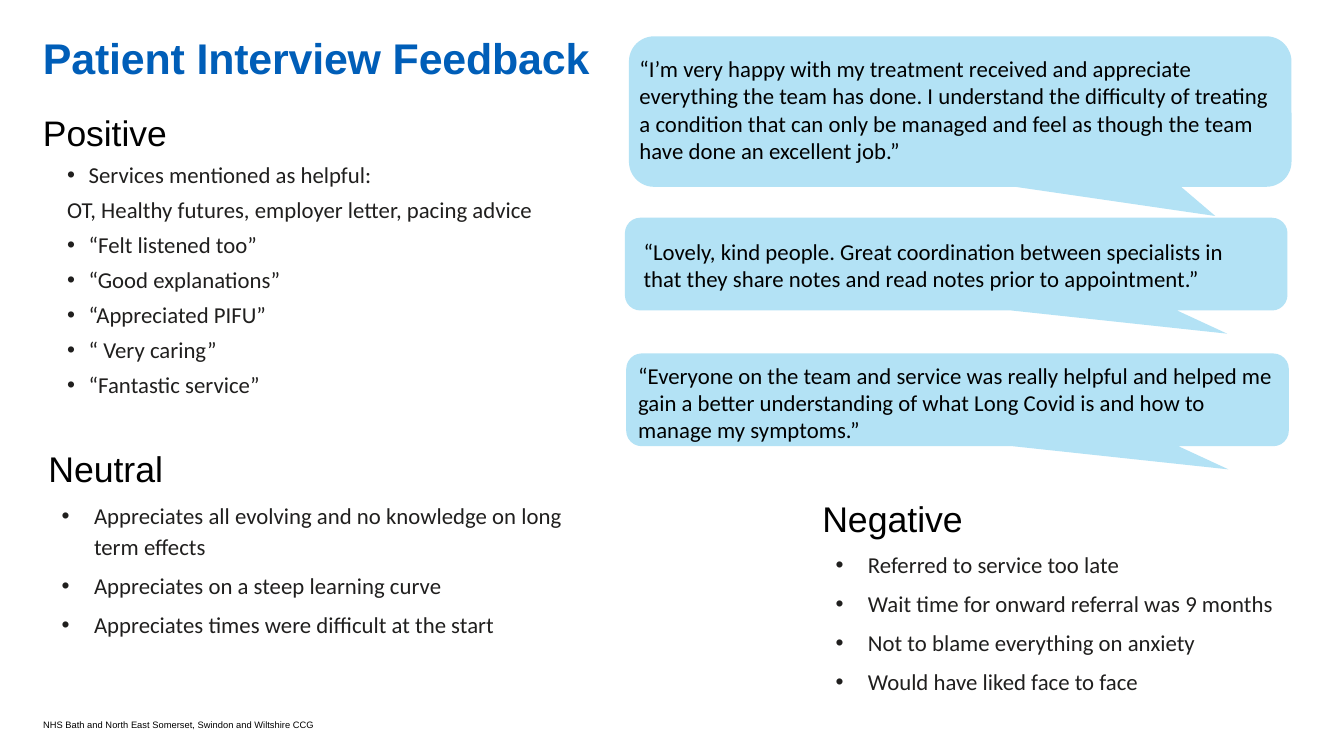
from lxml.etree import SubElement
from pptx import Presentation
from pptx.dml.color import RGBColor
from pptx.enum.shapes import MSO_SHAPE
from pptx.oxml.ns import qn
from pptx.util import Inches, Pt

BLUE = RGBColor(0x00, 0x5E, 0xB8)
PALE_BLUE = RGBColor(0xB3, 0xE2, 0xF5)
BLACK = RGBColor(0, 0, 0)
DARK = RGBColor(0x20, 0x1F, 0x1E)
BODY_SIZE = 12.2

TITLE = "Patient Interview Feedback"
FOOTER = "NHS Bath and North East Somerset, Swindon and Wiltshire CCG"

# Lines in "plain" are indented without a bullet.
SECTIONS = [
    {"heading": "Positive", "box": (0.32, 0.84, 4.36, 3.95), "inset": (0, 0),
     "size": 19, "heading_spacing": Pt(21.8), "line_spacing": 1.0, "hanging": 0.16,
     "plain": ["OT, Healthy futures, employer letter, pacing advice"],
     "lines": ["Services mentioned as helpful:",
               "OT, Healthy futures, employer letter, pacing advice",
               "“Felt listened too”", "“Good explanations”", "“Appreciated PIFU”",
               "“ Very caring”", "“Fantastic service”"]},
    {"heading": "Neutral", "box": (0.36, 3.2, 4.06, 1.89), "inset": (0, 0),
     "size": 19.1, "heading_spacing": Pt(32), "line_spacing": 1.15, "hanging": 0.24,
     "plain": [],
     "lines": ["Appreciates all evolving and no knowledge on long term effects",
               "Appreciates on a steep learning curve",
               "Appreciates times were difficult at the start"]},
    {"heading": "Negative", "box": (6.02, 3.52, 4.77, 1.79), "inset": (0.1, 0.05),
     "size": 19.1, "heading_spacing": Pt(32), "line_spacing": 1.15, "hanging": 0.24,
     "plain": [],
     "lines": ["Referred to service too late",
               "Wait time for onward referral was 9 months",
               "Not to blame everything on anxiety",
               "Would have liked face to face"]},
]

# Callout box, callout adjustments, text box, quote
QUOTES = [
    ((4.68, 0.27, 4.93, 1.12), (0.385, 0.694, 0.167), (4.66, 0.36, 5, 0.93),
     "“I’m very happy with my treatment received and appreciate everything the team "
     "has done. I understand the difficulty of treating a condition that can only be "
     "managed and feel as though the team have done an excellent job.”"),
    ((4.65, 1.62, 4.93, 0.69), (0.409, 0.75, 0.167), (4.69, 1.72, 4.55, 0.81),
     "“Lovely, kind people. Great coordination between specialists in that they share "
     "notes and read notes prior to appointment.”"),
    ((4.66, 2.63, 4.93, 0.69), (0.409, 0.75, 0.167), (4.65, 2.64, 5, 0.63),
     "“Everyone on the team and service was really helpful and helped me gain a better "
     "understanding of what Long Covid is and how to manage my symptoms.”"),
]


def add_text_frame(slide, box, inset=(0, 0)):
    frame = slide.shapes.add_textbox(*map(Inches, box)).text_frame
    frame.word_wrap = True
    frame.margin_left = frame.margin_right = Inches(inset[0])
    frame.margin_top = frame.margin_bottom = Inches(inset[1])
    return frame


def write(paragraph, text, size, color, font_name="Arial", bold=False):
    paragraph.text = text
    font = paragraph.font
    font.name, font.size, font.bold = font_name, Pt(size), bold
    font.color.rgb = color


def set_indent(paragraph, left, hanging=0, bullet=None):
    properties = paragraph._p.get_or_add_pPr()
    properties.set("marL", str(Inches(left)))
    properties.set("indent", str(-Inches(hanging)))
    if bullet:
        SubElement(properties, qn("a:buFont")).set("typeface", "Arial")
        SubElement(properties, qn("a:buChar")).set("char", bullet)


def add_section(slide, section):
    frame = add_text_frame(slide, section["box"], section["inset"])
    heading = frame.paragraphs[0]
    heading.line_spacing = section["heading_spacing"]
    write(heading, section["heading"], section["size"], BLACK)
    for line in section["lines"]:
        paragraph = frame.add_paragraph()
        if line in section["plain"]:
            set_indent(paragraph, 0.18)
        else:
            set_indent(paragraph, 0.34, section["hanging"], "•")
        paragraph.line_spacing = section["line_spacing"]
        paragraph.space_before = Pt(4.1)
        write(paragraph, line, BODY_SIZE, DARK, "Calibri")


def add_quote(slide, callout_box, adjustments, text_box, quote):
    callout = slide.shapes.add_shape(
        MSO_SHAPE.ROUNDED_RECTANGULAR_CALLOUT, *map(Inches, callout_box))
    for index, value in enumerate(adjustments):
        callout.adjustments[index] = value
    callout.shadow.inherit = False
    callout.fill.solid()
    callout.fill.fore_color.rgb = PALE_BLUE
    callout.line.fill.background()
    frame = add_text_frame(slide, text_box, (0.1, 0.05))
    write(frame.paragraphs[0], quote, BODY_SIZE, BLACK, "Calibri")


def main():
    presentation = Presentation()
    presentation.slide_width = Inches(10)
    presentation.slide_height = Inches(10 * 9 / 16)
    slide = presentation.slides.add_slide(presentation.slide_layouts[6])

    title = add_text_frame(slide, (0.32, 0.28, 9.36, 0.34)).paragraphs[0]
    title.line_spacing = Pt(24.5)
    write(title, TITLE, 23, BLUE, bold=True)
    title.runs[0]._r.get_or_add_rPr().set("spc", "-10")

    for section in SECTIONS:
        add_section(slide, section)
    for quote in QUOTES:
        add_quote(slide, *quote)

    footer = add_text_frame(slide, (0.32, 5.35, 8.15, 0.08)).paragraphs[0]
    write(footer, FOOTER, 5, BLACK)
    presentation.save("out.pptx")


if __name__ == "__main__":
    main()
